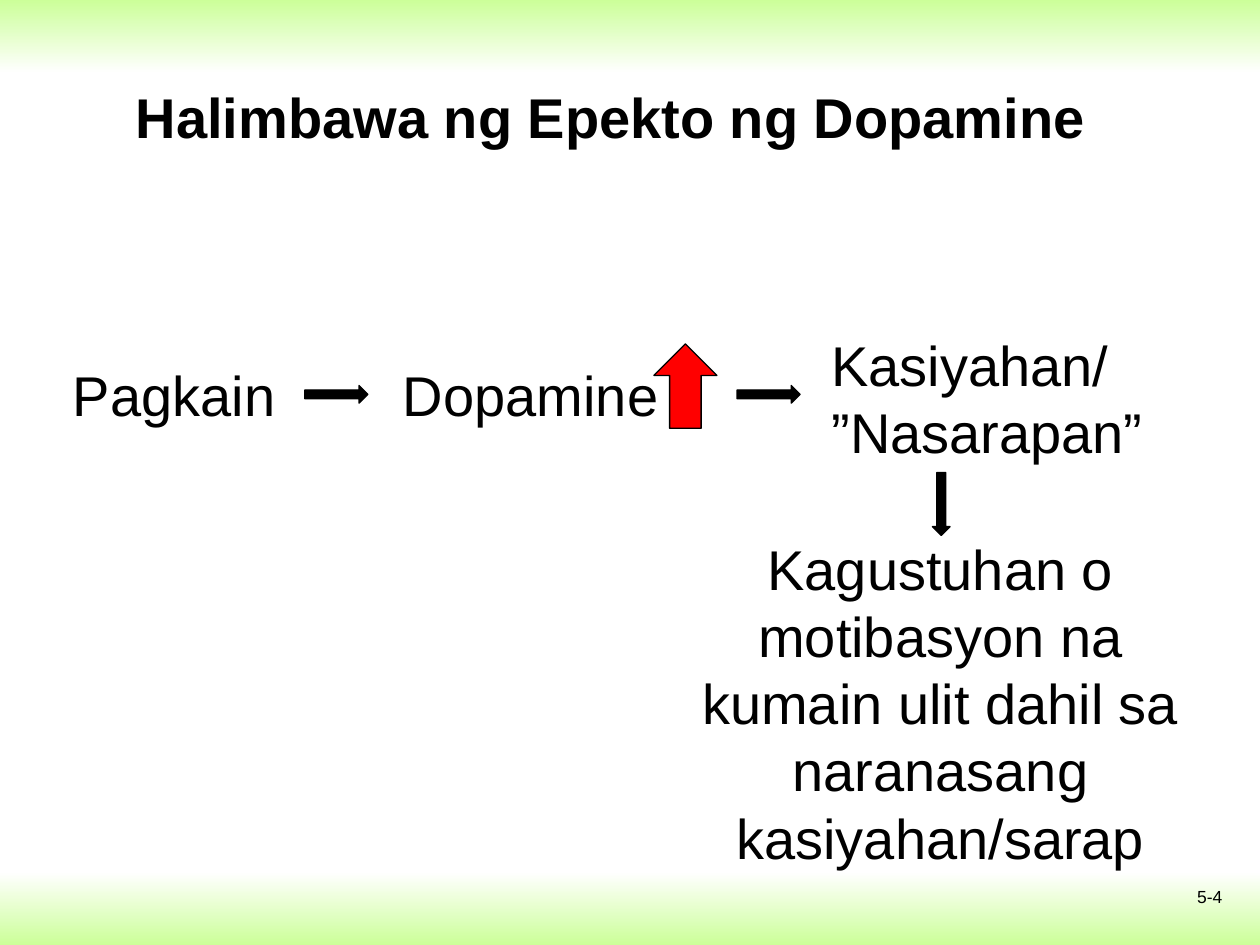
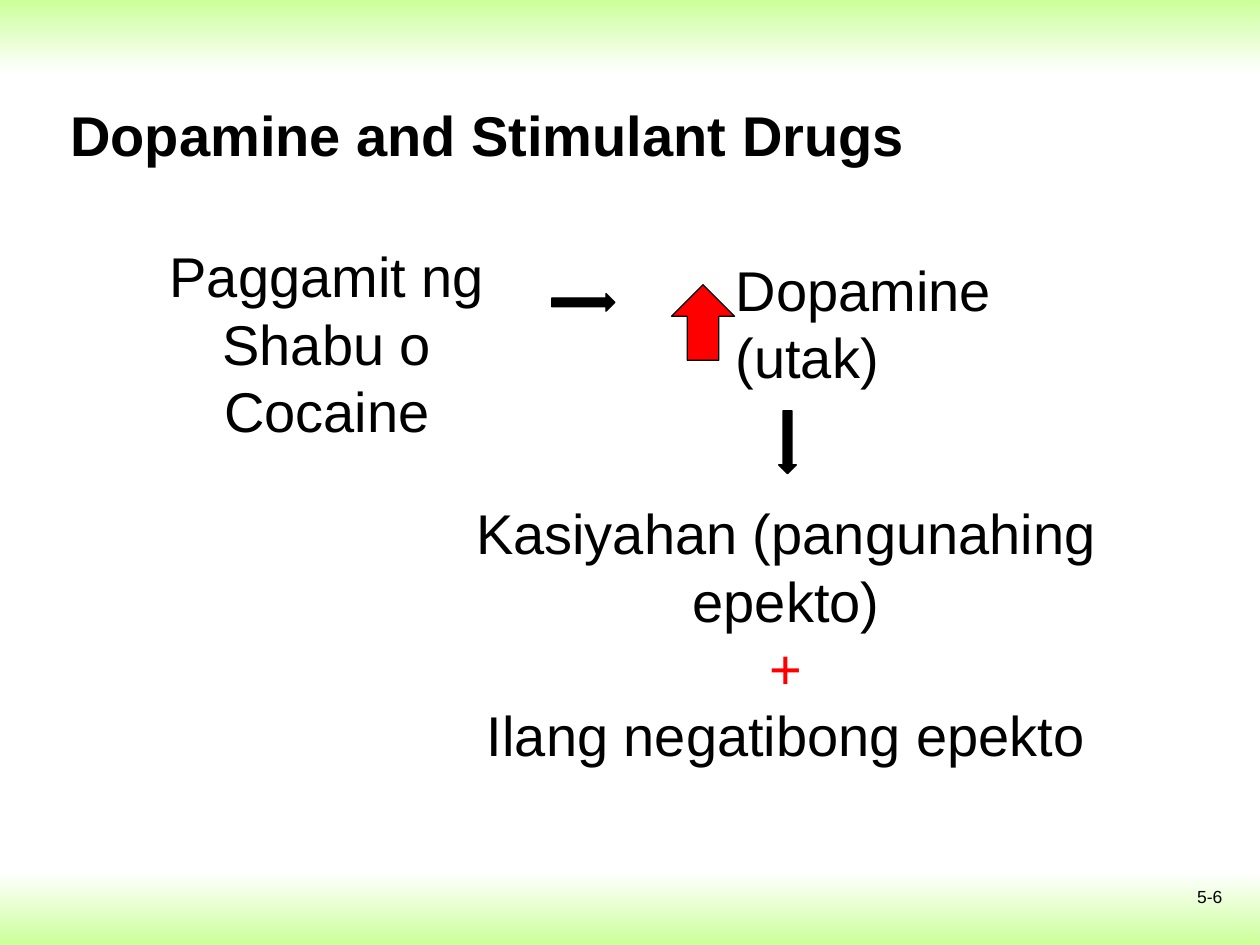
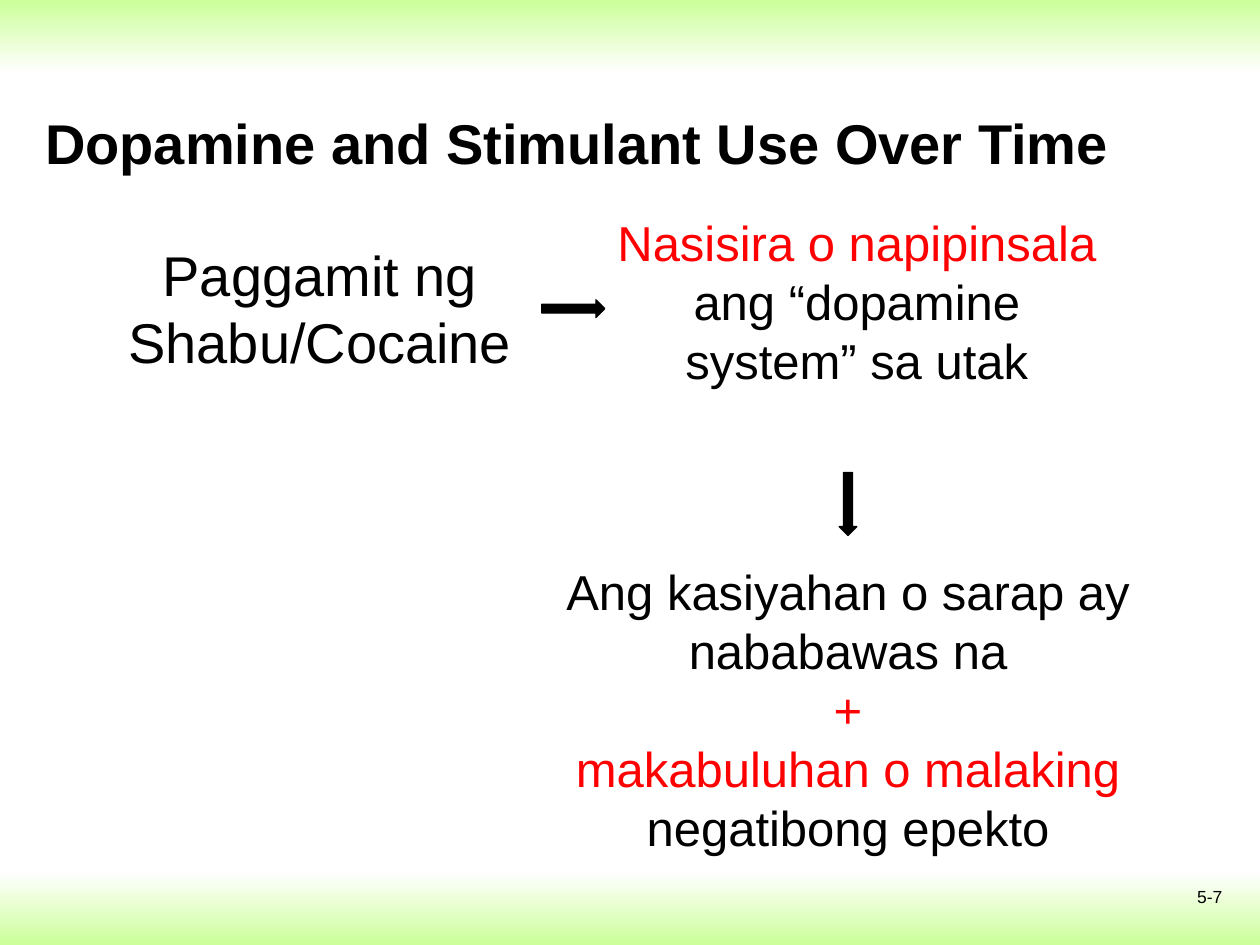
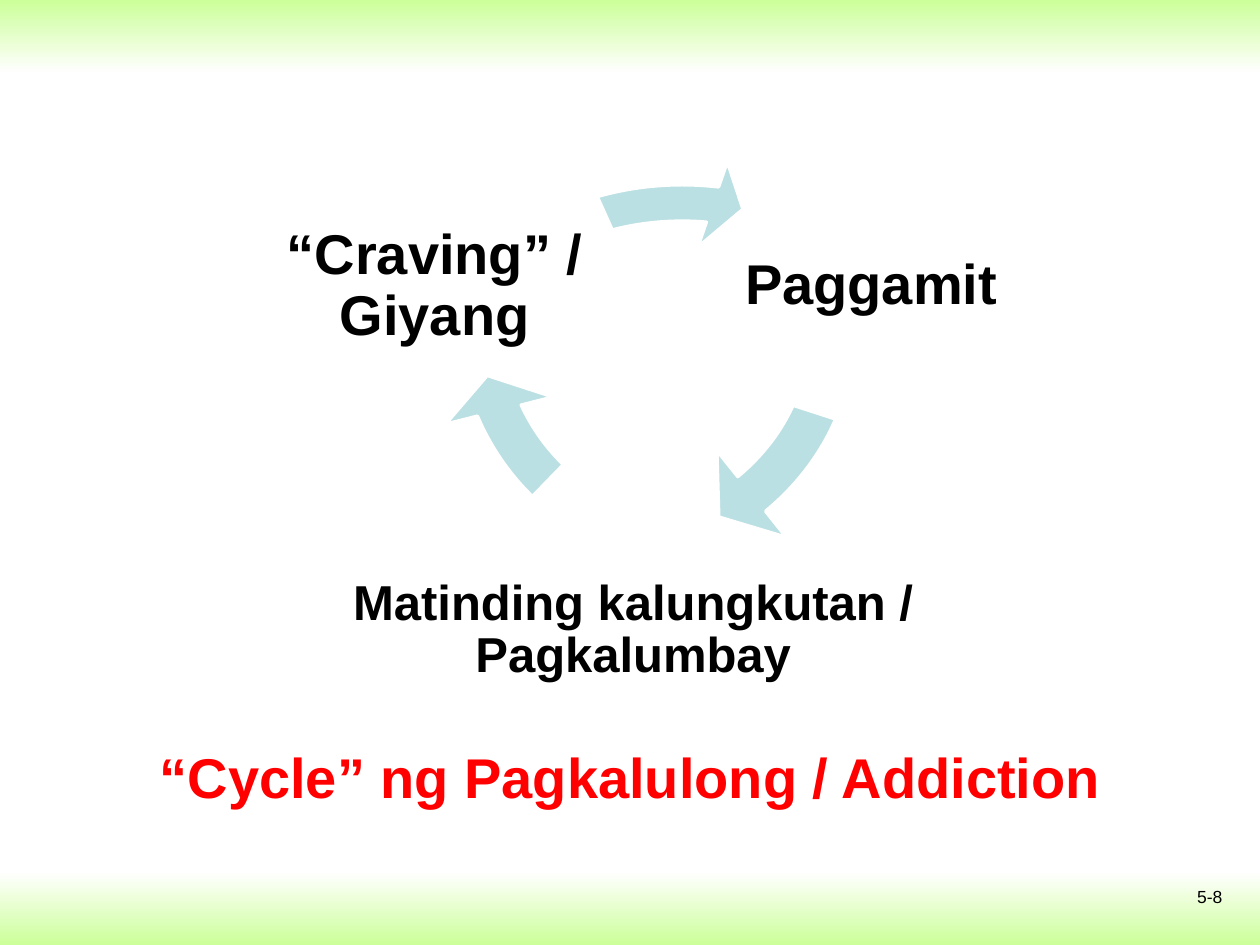
"""Build four slides on dopamine, stimulant drugs and the cycle of addiction."""
import pptx
import pptx.util
import pptx.dml.color
import pptx.enum.shapes
import pptx.enum.text

Inches = pptx.util.Inches
Kind = pptx.enum.shapes.MSO_SHAPE
Align = pptx.enum.text.PP_ALIGN
Anchor = pptx.enum.text.MSO_ANCHOR
Fit = pptx.enum.text.MSO_AUTO_SIZE

BLACK, WHITE, RED = "000000", "FFFFFF", "FF0000"
LIME, TEAL = "CCFF99", "BBE0E3"
WIDE, HIGH, BAND = 10, 7.5, 0.58
BODY = (0.5, 1.5, 9, 5.4)
RING = (2, 0.3, 6, 5.7)
GROW = {"auto_size": Fit.SHAPE_TO_FIT_TEXT}
LOOSE = {**GROW, "word_wrap": False}
MID = {"vertical_anchor": Anchor.MIDDLE}
TIGHT = {**MID, "margin_left": Inches(0.04), "margin_right": Inches(0.04),
         "margin_top": Inches(0.04), "margin_bottom": Inches(0.04)}


def color(code):
    """Turn a hex string into a colour."""
    return pptx.dml.color.RGBColor.from_string(code)


def style(item, form):
    """Set each format value on the item."""
    for name, value in form.items():
        setattr(item, name, value)


def inside(box, place):
    """Shift a place by the corner of its box."""
    return box[0] + place[0], box[1] + place[1], place[2], place[3]


def write(slide, place, text, size=32, bold=False, tint=BLACK, frame=GROW, para=None):
    """Add a text box; text is a list of paragraphs made of (words, colour) runs."""
    body = slide.shapes.add_textbox(*map(Inches, place)).text_frame
    style(body, {"word_wrap": True, **frame})
    if isinstance(text, str):
        text = [[(text, tint)]]
    for index, runs in enumerate(text):
        line = body.add_paragraph() if index else body.paragraphs[0]
        style(line, para or {})
        for words, shade in runs:
            for count, piece in enumerate(words.split("\n")):
                if count:
                    line.add_line_break()
                if piece:
                    run = line.add_run()
                    run.text = piece
                    style(run.font, {"name": "Arial", "size": pptx.util.Pt(size), "bold": bold})
                    run.font.color.rgb = color(shade)


def draw(slide, kind, place, fill, edge=BLACK, weight=0.75):
    """Add a filled and outlined preset shape."""
    shape = slide.shapes.add_shape(kind, *map(Inches, place))
    shape.shadow.inherit = False
    shape.fill.solid()
    shape.fill.fore_color.rgb = color(fill)
    shape.line.color.rgb = color(edge)
    shape.line.width = pptx.util.Pt(weight)
    return shape


def band(slide, top, tints):
    """Add a full-width band that fades downward."""
    shape = slide.shapes.add_shape(Kind.RECTANGLE, *map(Inches, (0, top, WIDE, BAND)))
    shape.shadow.inherit = False
    shape.line.fill.background()
    shape.fill.gradient()
    shape.fill.gradient_angle = 270
    for stop, tint in zip(shape.fill.gradient_stops, tints):
        stop.color.rgb = color(tint)


def start(deck, number):
    """Add a slide with its bands and page number."""
    slide = deck.slides.add_slide(deck.slide_layouts[6])
    band(slide, HIGH - BAND, (WHITE, LIME))
    band(slide, 0, (LIME, WHITE))
    write(slide, (7.47, 6.98, 2.33, 0.52), number, 10, frame={},
          para={"alignment": Align.RIGHT})
    return slide


def flow(slide, box, title, place, notes, steps, rise=None):
    """Fill a slide with a title, notes and the arrows between them."""
    write(slide, place, title, bold=True, frame=MID)
    for spot, text, form in notes:
        write(slide, inside(box, spot), text, **form)
    for left, top, turn in steps:
        arrow = draw(slide, Kind.RIGHT_ARROW, inside(box, (left, top, 0.5, 0.14)), BLACK)
        arrow.rotation = turn
    if rise:
        draw(slide, Kind.UP_ARROW, inside(box, rise), RED)


def cycle(slide, box, notes, bends):
    """Fill a box with a ring of notes and curved arrows."""
    for spot, text, size in notes:
        write(slide, inside(box, spot), text, size, True, frame=TIGHT,
              para={"alignment": Align.CENTER, "line_spacing": 0.9})
    for spot, end, begin in bends:
        arrow = draw(slide, Kind.CIRCULAR_ARROW, inside(box, spot), TEAL, WHITE, 2)
        for index, value in enumerate((0.08, 9.59 * 0.6, end * 0.6, begin * 0.6, 0.1)):
            arrow.adjustments[index] = value


def main():
    """Build and save the deck."""
    deck = pptx.Presentation()
    style(deck, {"slide_width": Inches(WIDE), "slide_height": Inches(HIGH)})
    center = {"para": {"alignment": Align.CENTER}}
    small = {**center, "size": 28}
    loose = {"frame": LOOSE}

    flow(start(deck, "5-4"), BODY, "Halimbawa ng Epekto ng Dopamine", (0.98, 0.3, 8.42, 1.25), [
        ((-0.02, 1.31, 1.82, 0.64), "Pagkain", loose),
        ((2.6, 1.31, 2.24, 0.64), "Dopamine", loose),
        ((6, 1.07, 2.76, 1.18), [[("Kasiyahan/", BLACK)], [("”Nasarapan”", BLACK)]], {}),
        ((4.95, 2.69, 4.03, 2.79),
         "Kagustuhan o motibasyon na kumain ulit dahil sa naranasang kasiyahan/sarap", center),
    ], [(1.92, 1.56, 0), (5.35, 1.56, 0), (6.72, 2.43, 90)], (4.69, 1.23, 0.5, 0.67))

    flow(start(deck, "5-6"), BODY, "Dopamine and Stimulant Drugs", (0.46, 0.44, 9.54, 1.25), [
        ((0.42, 0.37, 3.35, 1.72), "Paggamit ng Shabu o Cocaine", center),
        ((5.24, 0.48, 2.33, 1.18), "Dopamine (utak)", {}),
        ((2.89, 2.41, 5.7, 2.26),
         [[("Kasiyahan (pangunahing epekto)\n", BLACK), ("+\n", RED),
           ("Ilang negatibong epekto", BLACK)]], center),
    ], [(3.88, 0.83, 0), (5.5, 1.94, 90)], (4.83, 0.76, 0.5, 0.6))

    flow(start(deck, "5-7"), BODY, "Dopamine and Stimulant Use Over Time",
         (0.26, 0.5, 9.54, 1.25), [
        ((4.3, 0.14, 4, 1.99),
         [[("Nasisira o napipinsala ", RED), ("ang “dopamine system” sa utak", BLACK)]], small),
        ((0.25, 0.36, 3.58, 1.18), "Paggamit ng Shabu/Cocaine", center),
        ((3.38, 2.91, 5.7, 2.46),
         [[("Ang kasiyahan o sarap ay nababawas na\n", BLACK),
           ("+\nmakabuluhan o malaking ", RED), ("negatibong epekto", BLACK)]], small),
    ], [(3.8, 0.88, 0), (5.98, 2.43, 90)])

    last = start(deck, "5-8")
    cycle(last, RING, [
        ((3.74, 1.04, 2.35, 1.87), "Paggamit", 32),
        ((0.73, 3.77, 4.59, 1.87), "Matinding kalungkutan / Pagkalumbay", 28),
        ((0.23, 1.04, 2.44, 1.87), "“Craving” / Giyang", 32),
    ], [
        ((0.03, 0.13, 5.01, 4.43), 41.7, 17.99),
        ((1.37, 0.03, 4.43, 4.43), 156.21, 134.21),
        ((1.2, 0.95, 4.43, 3.61), 279.51, 245.68),
    ])
    write(last, (1.14, 5.84, 7.73, 0.64), "“Cycle” ng Pagkalulong / Addiction",
          bold=True, tint=RED, frame=LOOSE, **center)
    deck.save("out.pptx")


if __name__ == "__main__":
    main()
